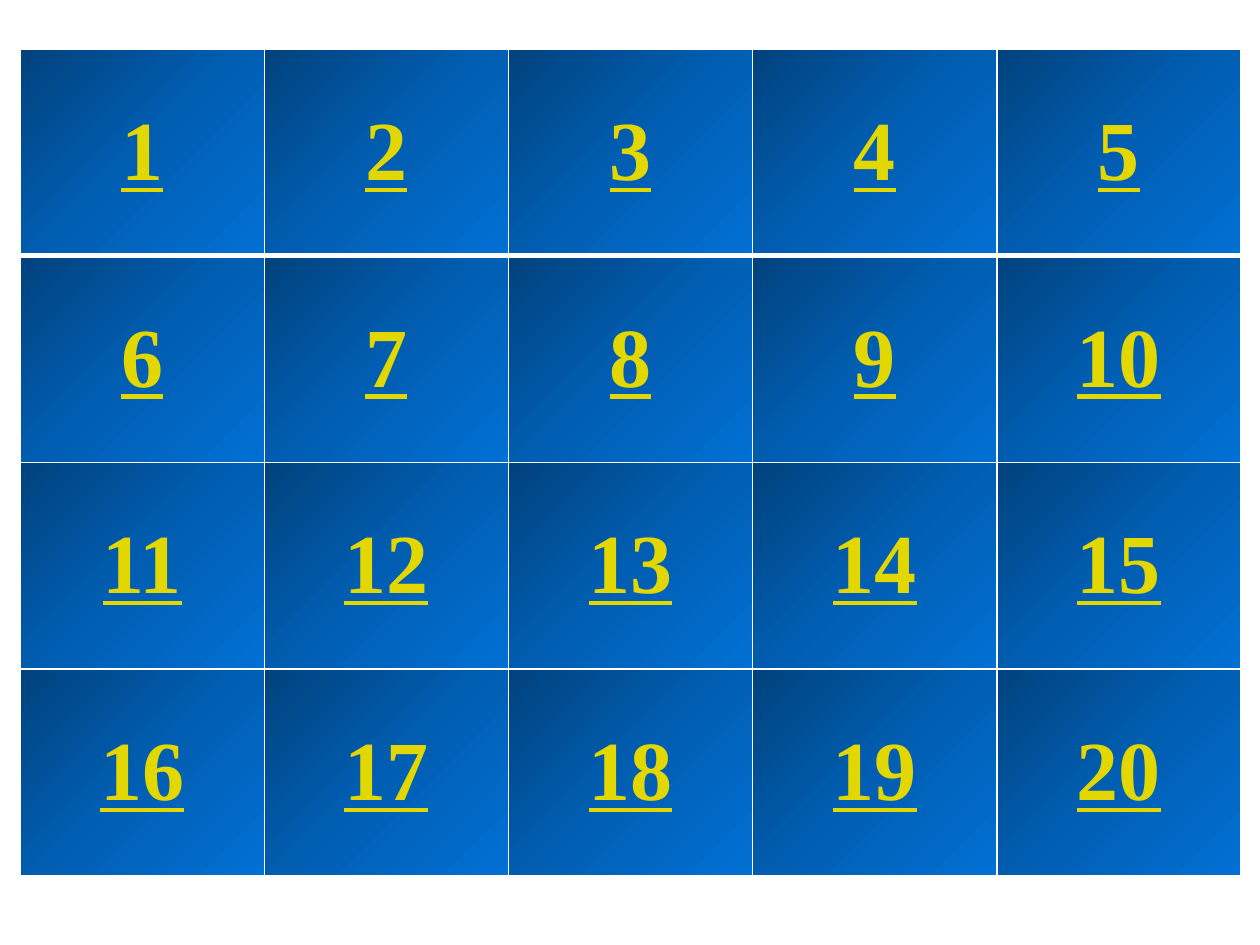
from lxml import etree
from pptx import Presentation
from pptx import util as u
from pptx.dml.color import RGBColor
from pptx.enum import text
from pptx.oxml import ns

COLORS = {
    "border": "FFFFFF",
    "number": "E2D700",
    "dark": "01427D",
    "middle": "015EB2",
    "light": "0170D4",
}
GRADIENT = [(0, "dark"), (50, "middle"), (100, "light")]
GRADIENT_ANGLE = 45
ROWS, COLUMNS = 4, 5


def add_element(parent, tag, **attributes):
    element = etree.SubElement(parent, ns.qn(tag))
    for name, value in attributes.items():
        element.set(name, str(value))
    return element


def style_cell(cell, top, bottom):
    """Give a cell its borders (widths in points) and its gradient."""
    properties = cell._tc.get_or_add_tcPr()
    # Borders come before the fill in the schema
    for side, width in (("L", 1), ("R", 1), ("T", top), ("B", bottom)):
        line = add_element(properties, f"a:ln{side}", w=u.Pt(width))
        solid = add_element(line, "a:solidFill")
        add_element(solid, "a:srgbClr", val=COLORS["border"])
    gradient = add_element(properties, "a:gradFill", rotWithShape=1)
    stops = add_element(gradient, "a:gsLst")
    for percent, name in GRADIENT:
        stop = add_element(stops, "a:gs", pos=percent * 1000)
        add_element(stop, "a:srgbClr", val=COLORS[name])
    add_element(gradient, "a:lin", ang=GRADIENT_ANGLE * 60000, scaled=1)


def write_number(cell, number):
    cell.vertical_anchor = text.MSO_ANCHOR.MIDDLE
    para = cell.text_frame.paragraphs[0]
    para.alignment = text.PP_ALIGN.CENTER
    span = para.add_run()
    span.text = str(number)
    span.font.name = "Times New Roman"
    span.font.size = u.Pt(48)
    span.font.bold = True
    span.font.underline = True
    span.font.color.rgb = RGBColor.from_string(COLORS["number"])


def add_number_board(page, left, top, width, height):
    board = page.shapes.add_table(ROWS, COLUMNS, left, top, width, height).table
    board.first_row = False
    board.horz_banding = False
    for column in board.columns:
        column.width = width // COLUMNS
    for row in board.rows:
        row.height = height // ROWS

    # Numbers run left to right; a thicker rule follows the first row
    for index, cell in enumerate(board.iter_cells()):
        row = index // COLUMNS
        style_cell(cell, top=3 if row == 1 else 1, bottom=3 if row == 0 else 1)
        write_number(cell, index + 1)


def main():
    deck = Presentation()
    deck.slide_width, deck.slide_height = u.Inches(10), u.Inches(7.5)
    page = deck.slides.add_slide(deck.slide_layouts[6])
    add_number_board(page, u.Inches(0.16), u.Inches(0.39),
                     u.Inches(9.69), u.Inches(6.56))
    deck.save("out.pptx")


if __name__ == "__main__":
    main()
